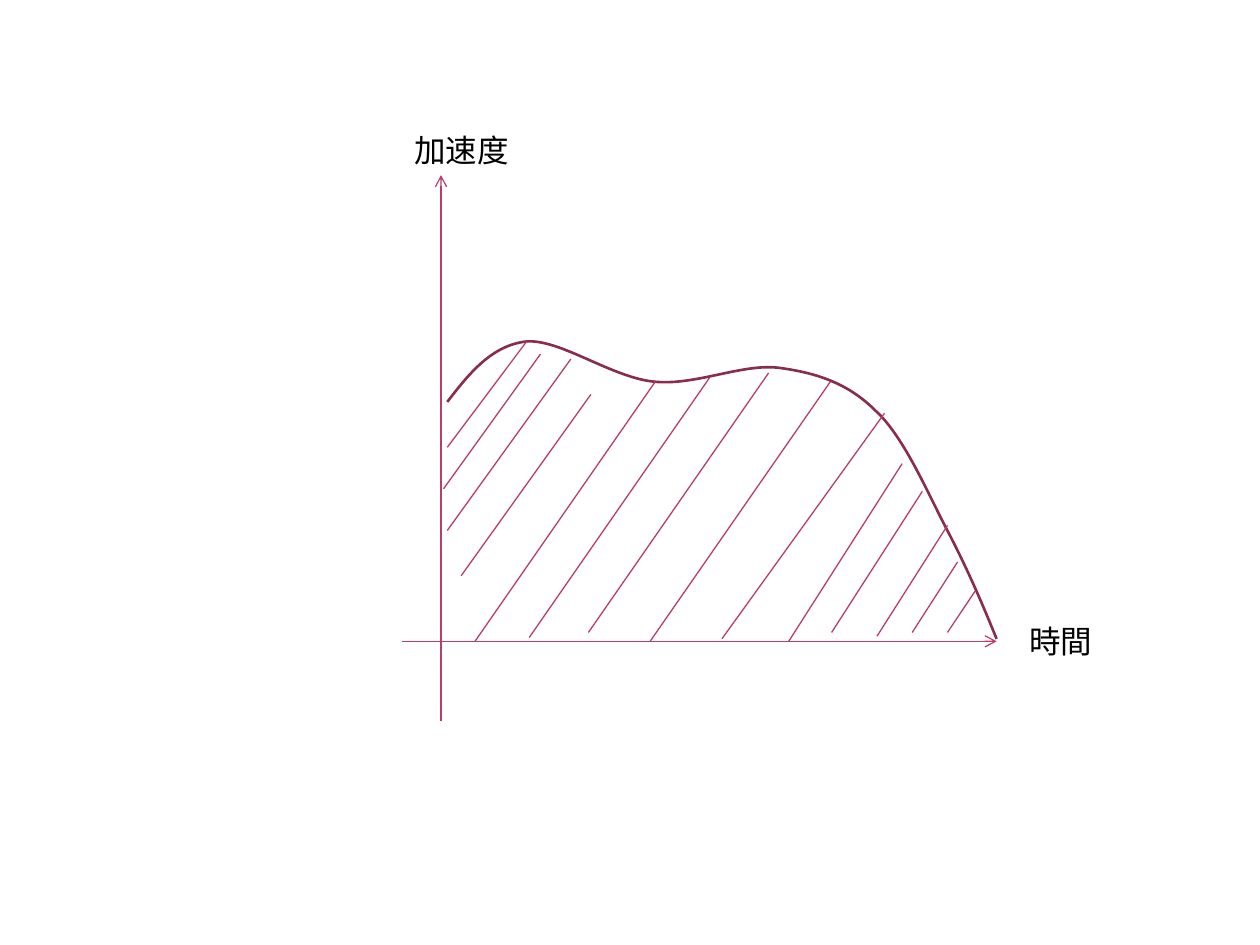
from lxml import etree
from pptx import Presentation
from pptx.dml.color import RGBColor
from pptx.enum.shapes import MSO_CONNECTOR
from pptx.enum.text import MSO_AUTO_SIZE
from pptx.oxml.ns import qn
from pptx.util import Inches, Pt

STRAIGHT = MSO_CONNECTOR.STRAIGHT
FIT_SHAPE = MSO_AUTO_SIZE.SHAPE_TO_FIT_TEXT
COLUMNS, ROWS = 100, 75
COLORS = {"line": "B83D68", "curve": "882D4D", "text": "000000"}

# Points are (column, row) on the grid.
AXES = [((35, 57.2), (35, 13.9)), ((31.9, 50.9), (79.1, 50.9))]
LABELS = [("加速度", 31.9, 9.9, 9.6, 4), ("時間", 80.7, 48.9, 7.1, 4)]
CURVE_START = (35.5, 31.9)
CURVE_CONTROLS = [
    (37.2, 29.7), (39, 27.4), (41.8, 27.1),
    (44.5, 26.9), (48.6, 30), (52, 30.3),
    (55.3, 30.6), (59, 28.8), (61.9, 29.2),
    (64.8, 29.6), (67.3, 30.4), (69.5, 32.6),
    (71.8, 34.7), (73.7, 39.3), (75.3, 42.3),
    (76.9, 45.4), (78, 48), (79.1, 50.7),
]
HATCHING = [
    ((41.8, 27.1), (35.5, 35.5)), ((42.9, 28.1), (35.2, 38.8)),
    ((45.3, 28.5), (35.5, 42.1)), ((46.9, 31.3), (36.6, 45.7)),
    ((52, 30.3), (37.7, 50.9)), ((56.3, 30), (42, 50.6)),
    ((61, 29.6), (46.7, 50.2)), ((65.9, 30.3), (51.6, 50.9)),
    ((70.2, 32.8), (57.3, 50.7)), ((71.6, 36.8), (62.6, 50.9)),
    ((73.2, 39), (66, 50.2)), ((75.2, 41.7), (69.6, 50.5)),
    ((76, 44.6), (72.4, 50.2)), ((77.4, 46.9), (75.2, 50.2)),
]


class GraphPage:
    def __init__(self, deck):
        self.page = deck.slides.add_slide(deck.slide_layouts[6])
        self.column = deck.slide_width / COLUMNS
        self.row = deck.slide_height / ROWS
        self.font = "Roboto"

    def place(self, point):
        return round(point[0] * self.column), round(point[1] * self.row)

    def style_line(self, shape, color, width):
        shape.line.color.rgb = RGBColor.from_string(COLORS[color])
        shape.line.width = Pt(width)

    def line(self, start, end, arrow=False):
        connector = self.page.shapes.add_connector(
            STRAIGHT, *self.place(start), *self.place(end))
        self.style_line(connector, "line", 0.75)
        if arrow:
            outline = connector.line._get_or_add_ln()
            etree.SubElement(outline, qn("a:tailEnd"), type="arrow")
        etree.SubElement(connector._element.spPr, qn("a:effectLst"))

    def curve(self, start, controls):
        """Draw cubic Bezier segments, three control points to each."""
        builder = self.page.shapes.build_freeform(*self.place(start))
        builder.add_line_segments([self.place(point) for point in controls], close=False)
        shape = builder.convert_to_shape()
        segments = list(shape._element.iter(qn("a:lnTo")))
        outline = segments[0].getparent()
        for first in range(0, len(segments), 3):
            bezier = etree.SubElement(outline, qn("a:cubicBezTo"))
            for segment in segments[first:first + 3]:
                bezier.append(segment[0])
                outline.remove(segment)
        shape.fill.background()
        shape.shadow.inherit = False
        self.style_line(shape, "curve", 1.5)

    def label(self, text, left, top, width, height):
        box = self.page.shapes.add_textbox(
            *self.place((left, top)), *self.place((width, height)))
        box.text_frame.word_wrap = False
        box.text_frame.auto_size = FIT_SHAPE
        span = box.text_frame.paragraphs[0].add_run()
        span.text = text
        span.font.name = self.font
        span.font.size = Pt(18)
        span.font.color.rgb = RGBColor.from_string(COLORS["text"])


def main():
    deck = Presentation()
    deck.slide_width, deck.slide_height = Inches(10), Inches(7.5)
    graph = GraphPage(deck)
    for start, end in AXES:
        graph.line(start, end, arrow=True)
    for label in LABELS:
        graph.label(*label)
    graph.curve(CURVE_START, CURVE_CONTROLS)
    for start, end in HATCHING:
        graph.line(start, end)
    deck.save("out.pptx")


if __name__ == "__main__":
    main()
